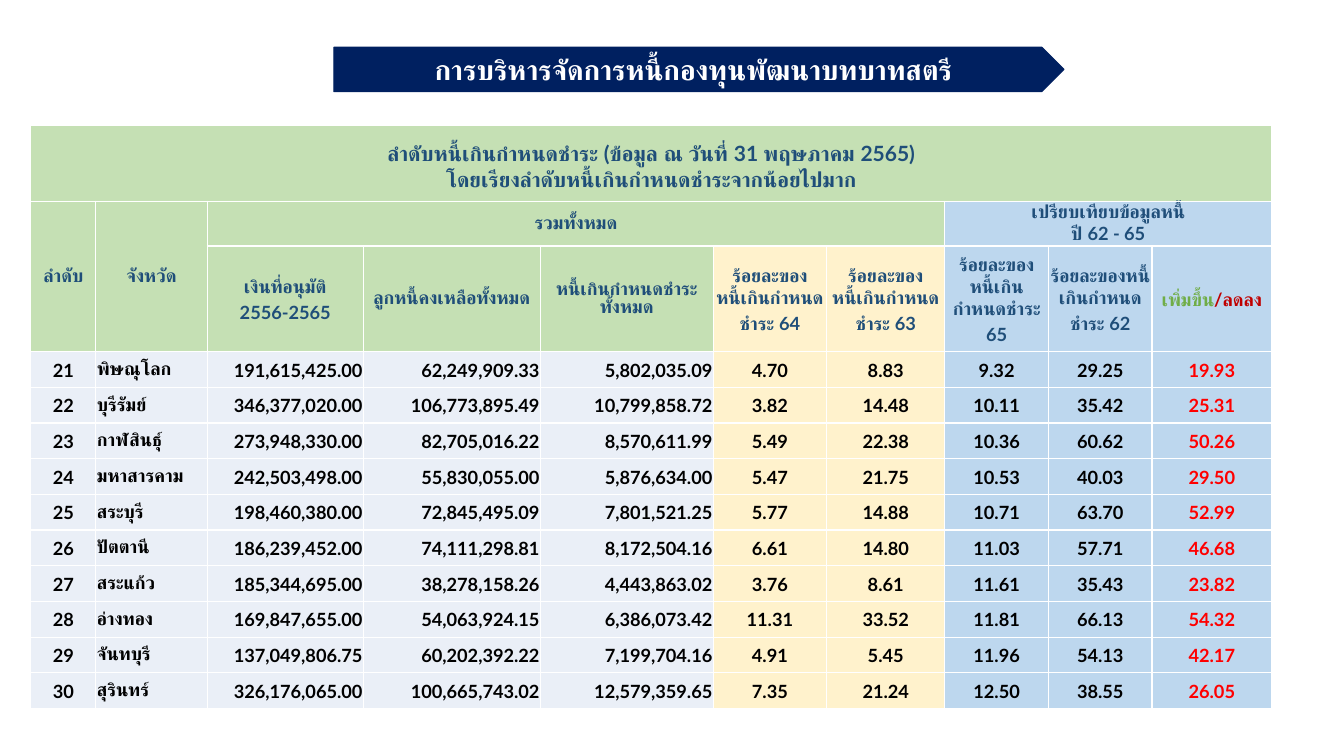
import dataclasses

import pptx
import pptx.dml.color
import pptx.enum.shapes
import pptx.enum.text
import pptx.oxml.ns
import pptx.util
from lxml import etree

Pt = pptx.util.Pt
ALIGN = pptx.enum.text.PP_ALIGN
MIDDLE = pptx.enum.text.MSO_ANCHOR.MIDDLE


@dataclasses.dataclass(frozen=True)
class Theme:
    font: str = "Lato"
    banner_size: float = 20
    caption_size: float = 15
    cell_size: float = 13
    navy: str = "002060"
    white: str = "FFFFFF"
    heading: str = "1F4E79"
    black: str = "000000"
    red: str = "FF0000"
    rise: str = "70AD47"
    fall: str = "C00000"
    green: str = "C5E0B4"
    yellow: str = "FFF2CC"
    blue: str = "BDD7EE"
    pale: str = "EAEFF7"


THEME = Theme()

COL_WIDTHS = [46.5, 79.5, 111.5, 126.5, 123.5, 81, 84.5, 74, 74, 85.5]
HEADER_HEIGHTS = [54.5, 32, 75.5]
BODY_HEIGHT = 25.5
HEADER_FILLS = [THEME.green] * 5 + [THEME.yellow] * 2 + [THEME.blue] * 3
BODY_FILLS = [THEME.pale] * 5 + HEADER_FILLS[5:]
BODY_ALIGNS = [ALIGN.CENTER, ALIGN.LEFT] + [ALIGN.RIGHT] * 3 + [ALIGN.CENTER] * 5
BODY_COLORS = [THEME.black] * 9 + [THEME.red]

BANNER = "การบริหารจัดการหนี้กองทุนพัฒนาบทบาทสตรี"
CAPTION = [
    "ลำดับหนี้เกินกำหนดชำระ (ข้อมูล ณ วันที่ 31 พฤษภาคม 2565)",
    "โดยเรียงลำดับหนี้เกินกำหนดชำระจากน้อยไปมาก",
]
# first column, last row, last column, lines
GROUPS = [
    (0, 2, 0, ["ลำดับ"]),
    (1, 2, 1, ["จังหวัด"]),
    (2, 1, 6, ["รวมทั้งหมด"]),
    (7, 1, 9, ["เปรียบเทียบข้อมูลหนี้", "ปี 62 - 65"]),
]
# column, text, line spacing
COLUMN_HEADS = [
    (2, "เงินที่อนุมัติ\n2556-2565", 1.2),
    (3, "ลูกหนี้คงเหลือทั้งหมด", None),
    (4, "หนี้เกินกำหนดชำระทั้งหมด", None),
    (5, "ร้อยละของ\nหนี้เกินกำหนดชำระ 64", 1.2),
    (6, "ร้อยละของ\nหนี้เกินกำหนดชำระ 63", 1.2),
    (7, "ร้อยละของ\nหนี้เกินกำหนดชำระ 65", 1.2),
    (8, "ร้อยละของหนี้เกินกำหนดชำระ 62", 1.2),
]
PROVINCES = [
    ("21", "พิษณุโลก", "191,615,425.00", "62,249,909.33", "5,802,035.09", "4.70", "8.83", "9.32", "29.25", "19.93"),
    ("22", "บุรีรัมย์", "346,377,020.00", "106,773,895.49", "10,799,858.72", "3.82", "14.48", "10.11", "35.42", "25.31"),
    ("23", "กาฬสินธุ์", "273,948,330.00", "82,705,016.22", "8,570,611.99", "5.49", "22.38", "10.36", "60.62", "50.26"),
    ("24", "มหาสารคาม", "242,503,498.00", "55,830,055.00", "5,876,634.00", "5.47", "21.75", "10.53", "40.03", "29.50"),
    ("25", "สระบุรี", "198,460,380.00", "72,845,495.09", "7,801,521.25", "5.77", "14.88", "10.71", "63.70", "52.99"),
    ("26", "ปัตตานี", "186,239,452.00", "74,111,298.81", "8,172,504.16", "6.61", "14.80", "11.03", "57.71", "46.68"),
    ("27", "สระแก้ว", "185,344,695.00", "38,278,158.26", "4,443,863.02", "3.76", "8.61", "11.61", "35.43", "23.82"),
    ("28", "อ่างทอง", "169,847,655.00", "54,063,924.15", "6,386,073.42", "11.31", "33.52", "11.81", "66.13", "54.32"),
    ("29", "จันทบุรี", "137,049,806.75", "60,202,392.22", "7,199,704.16", "4.91", "5.45", "11.96", "54.13", "42.17"),
    ("30", "สุรินทร์", "326,176,065.00", "100,665,743.02", "12,579,359.65", "7.35", "21.24", "12.50", "38.55", "26.05"),
]


def rgb(color):
    return pptx.dml.color.RGBColor.from_string(color)


def add_run(p, text, size, color):
    r = p.add_run()
    r.text = text
    r.font.name = THEME.font
    r.font.size = Pt(size)
    r.font.bold = True
    r.font.color.rgb = rgb(color)


def write(tf, lines, size=THEME.cell_size, color=THEME.heading, align=ALIGN.CENTER, spacing=None):
    """Write one paragraph per line; a newline inside a line is a soft break."""
    for i, line in enumerate(lines):
        p = tf.paragraphs[0] if i == 0 else tf.add_paragraph()
        p.alignment = align
        if spacing:
            p.line_spacing = spacing
        for j, part in enumerate(line.split("\n")):
            if j:
                p.add_line_break()
            add_run(p, part, size, color)


def style_cell(cell, fill):
    cell.vertical_anchor = MIDDLE
    cell.margin_left = cell.margin_right = cell.margin_top = Pt(0.7)
    cell.margin_bottom = Pt(0)
    tc_pr = cell.fill._xPr
    for side in ("lnL", "lnR", "lnT", "lnB"):
        ln = etree.SubElement(tc_pr, pptx.oxml.ns.qn("a:" + side), w=str(Pt(1)))
        solid = etree.SubElement(ln, pptx.oxml.ns.qn("a:solidFill"))
        etree.SubElement(solid, pptx.oxml.ns.qn("a:srgbClr"), val=THEME.white)
    cell.fill.solid()
    cell.fill.fore_color.rgb = rgb(fill)


def add_banner(slide, left, top, width, height):
    sp = slide.shapes.add_shape(pptx.enum.shapes.MSO_SHAPE.PENTAGON,
                                Pt(left), Pt(top), Pt(width), Pt(height))
    sp.shadow.inherit = False
    sp.fill.solid()
    sp.fill.fore_color.rgb = rgb(THEME.navy)
    sp.line.color.rgb = rgb(THEME.navy)
    sp.line.width = Pt(0.75)
    tf = sp.text_frame
    tf.word_wrap = True
    tf.vertical_anchor = MIDDLE
    write(tf, [BANNER], THEME.banner_size, THEME.white)


def fill_headers(table):
    caption = table.cell(0, 0)
    caption.merge(table.cell(0, len(COL_WIDTHS) - 1))
    write(caption.text_frame, CAPTION, THEME.caption_size, spacing=1.2)
    for first, last_row, last, lines in GROUPS:
        cell = table.cell(1, first)
        cell.merge(table.cell(last_row, last))
        write(cell.text_frame, lines)
    for col, text, spacing in COLUMN_HEADS:
        write(table.cell(2, col).text_frame, [text], spacing=spacing)
    p = table.cell(2, 9).text_frame.paragraphs[0]
    p.alignment = ALIGN.CENTER
    add_run(p, "เพิ่มขึ้น", THEME.cell_size, THEME.rise)
    add_run(p, "/ลดลง", THEME.cell_size, THEME.fall)


def add_debt_table(slide, left, top):
    heights = HEADER_HEIGHTS + [BODY_HEIGHT] * len(PROVINCES)
    table = slide.shapes.add_table(len(heights), len(COL_WIDTHS), Pt(left), Pt(top),
                                   Pt(sum(COL_WIDTHS)), Pt(sum(heights))).table
    table.first_row = table.horz_banding = False
    for column, width in zip(table.columns, COL_WIDTHS):
        column.width = Pt(width)
    for i, height in enumerate(heights):
        table.rows[i].height = Pt(height)
        fills = HEADER_FILLS if i < len(HEADER_HEIGHTS) else BODY_FILLS
        for j, fill in enumerate(fills):
            # the caption and the totals group stay green across their span
            spans_green = i == 0 or (i == 1 and j < 7)
            style_cell(table.cell(i, j), THEME.green if spans_green else fill)
    fill_headers(table)
    for i, province in enumerate(PROVINCES, len(HEADER_HEIGHTS)):
        for j, value in enumerate(province):
            write(table.cell(i, j).text_frame, [value], color=BODY_COLORS[j], align=BODY_ALIGNS[j])


def main():
    prs = pptx.Presentation()
    prs.slide_width, prs.slide_height = Pt(960), Pt(540)
    slide = prs.slides.add_slide(prs.slide_layouts[6])
    add_banner(slide, 238.5, 33.75, 521.5, 31.75)
    add_debt_table(slide, 22, 89.25)
    prs.save("out.pptx")


if __name__ == "__main__":
    main()
